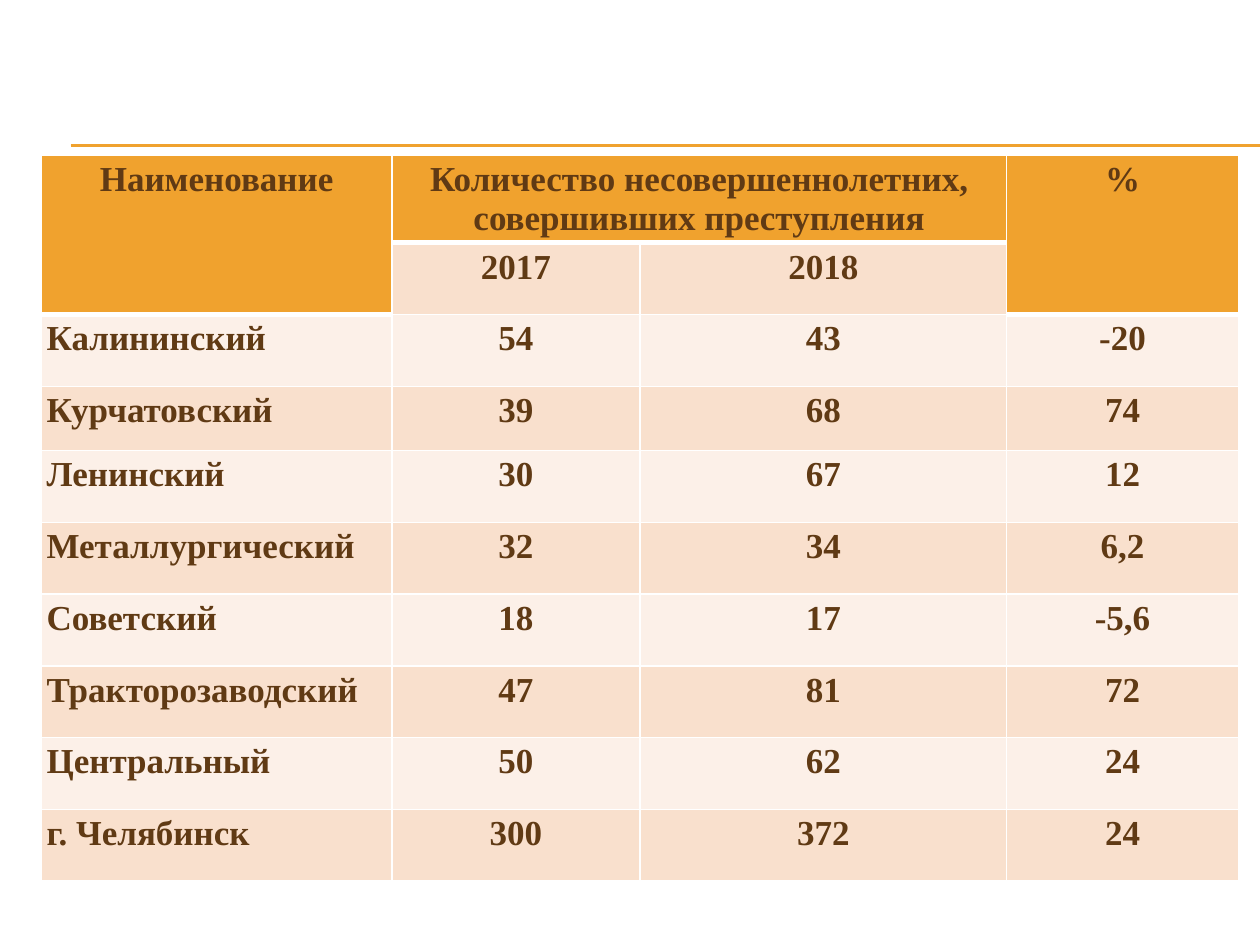
"""Builds a slide with a table of juvenile offenders by city district."""
from lxml.etree import SubElement
from pptx import Presentation
from pptx.dml.color import RGBColor
from pptx.enum.shapes import MSO_CONNECTOR
from pptx.enum.text import PP_ALIGN
from pptx.oxml.ns import qn
from pptx.util import Inches, Pt

ORANGE, BROWN, WHITE = "F0A22E", "603A14", "FFFFFF"
BANDS = ["FCF0E8", "F9E0CD"]
ROWS = [
    ("Наименование", "Количество несовершеннолетних, совершивших преступления", "", "%"),
    ("", "2017", "2018", ""),
    ("Калининский", "54", "43", "-20"),
    ("Курчатовский", "39", "68", "74"),
    ("Ленинский", "30", "67", "12"),
    ("Металлургический", "32", "34", "6,2"),
    ("Советский", "18", "17", "-5,6"),
    ("Тракторозаводский", "47", "81", "72"),
    ("Центральный", "50", "62", "24"),
    ("г. Челябинск", "300", "372", "24"),
]
MERGES = [((0, 0), (1, 0)), ((0, 1), (0, 2)), ((0, 3), (1, 3))]
COLUMN_WIDTHS = [2.78, 1.97, 2.91, 1.84]
ROW_HEIGHT, SHORT_ROW, SHORT_HEIGHT = 0.57, 3, 0.51
RULE_HEIGHTS = [1.15, 1.16]


def color(value):
    return RGBColor.from_string(value)


def add_rule(slide, top):
    rule = slide.shapes.add_connector(
        MSO_CONNECTOR.STRAIGHT, Inches(0.56), Inches(top), Inches(10), Inches(top))
    rule.line.color.rgb = color(ORANGE)
    rule.line.width = Pt(0.75)
    SubElement(rule._element.spPr, qn("a:effectLst"))


def add_border(cell, edge, width):
    properties = cell._tc.get_or_add_tcPr()
    line = SubElement(properties, qn(f"a:{edge}"), w=str(Pt(width)))
    SubElement(SubElement(line, qn("a:solidFill")), qn("a:srgbClr"), val=WHITE)


def write_cell(cell, text, fill, alignment, edges):
    cell.margin_left = cell.margin_right = Inches(0.04)
    cell.margin_top = cell.margin_bottom = Inches(0.04)
    for edge, width in edges.items():
        add_border(cell, edge, width)
    cell.fill.solid()
    cell.fill.fore_color.rgb = color(fill)
    if text:
        paragraph = cell.text_frame.paragraphs[0]
        paragraph.alignment = alignment
        run = paragraph.add_run()
        run.text = text
        run.font.name = "Times New Roman"
        run.font.size = Pt(20)
        run.font.bold = True
        run.font.color.rgb = color(BROWN)


def add_district_table(slide):
    heights = [SHORT_HEIGHT if row == SHORT_ROW else ROW_HEIGHT for row in range(len(ROWS))]
    table = slide.shapes.add_table(
        len(ROWS), len(COLUMN_WIDTHS), Inches(0.33), Inches(1.23),
        Inches(sum(COLUMN_WIDTHS)), Inches(sum(heights))).table
    for column, width in zip(table.columns, COLUMN_WIDTHS):
        column.width = Inches(width)
    for row, height in zip(table.rows, heights):
        row.height = Inches(height)
    for row, texts in enumerate(ROWS):
        for column, text in enumerate(texts):
            header = row == 0 or (row == 1 and not text)
            edges = {"lnL": 1, "lnR": 1}
            if row == 0:
                edges["lnT"] = 1
            edges["lnB"] = 3 if header else 1
            alignment = PP_ALIGN.JUSTIFY if column == 0 and row > 1 else PP_ALIGN.CENTER
            fill = ORANGE if header else BANDS[row % 2]
            write_cell(table.cell(row, column), text, fill, alignment, edges)
    for first, last in MERGES:
        table.cell(*first).merge(table.cell(*last))


def main():
    presentation = Presentation()
    presentation.slide_width, presentation.slide_height = Inches(10), Inches(7.5)
    slide = presentation.slides.add_slide(presentation.slide_layouts[6])
    for top in RULE_HEIGHTS:
        add_rule(slide, top)
    add_district_table(slide)
    presentation.save("out.pptx")


if __name__ == "__main__":
    main()
